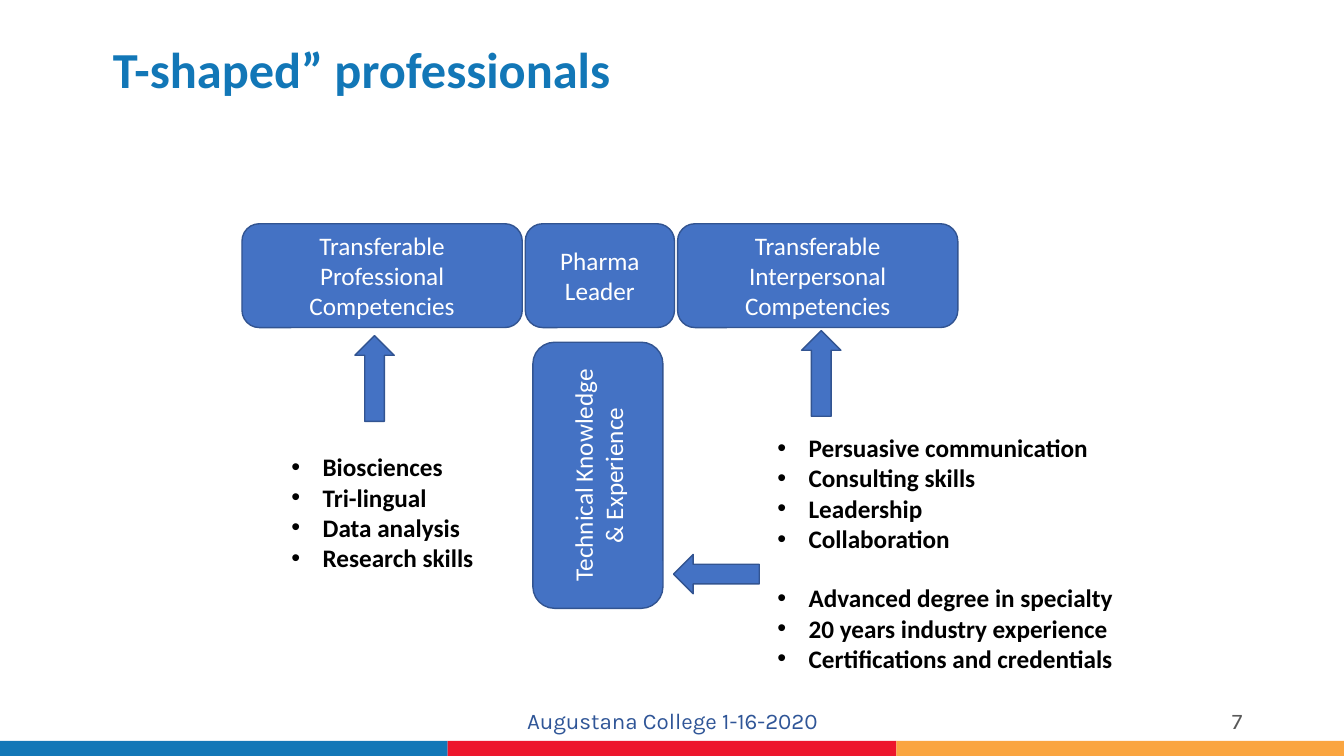
import pptx
import pptx.util
import pptx.dml.color
import pptx.enum.shapes
import pptx.enum.text
import pptx.oxml.ns
import lxml.etree

PX = 9144  # EMU per px, 100 px to the inch
RGB = pptx.dml.color.RGBColor
SHAPES = pptx.enum.shapes.MSO_SHAPE
ALIGN = pptx.enum.text.PP_ALIGN
ANCHOR = pptx.enum.text.MSO_ANCHOR

TITLE_BLUE = RGB(0x12, 0x77, 0xB7)
RED = RGB(0xED, 0x16, 0x2C)
ORANGE = RGB(0xFA, 0xA5, 0x40)
BOX_BLUE = RGB(0x44, 0x72, 0xC4)
BOX_LINE = RGB(0x32, 0x54, 0x91)
FOOTER_BLUE = RGB(0x2F, 0x55, 0x97)
GREY = RGB(0x59, 0x59, 0x59)
BLACK = RGB(0, 0, 0)
WHITE = RGB(0xFF, 0xFF, 0xFF)

COMPETENCIES = [
    (240, 278, ["Transferable Professional Competencies"]),
    (521, 148, ["Pharma", "Leader"]),
    (672, 278, ["Transferable Interpersonal Competencies"]),
]
ARROWS = [(352, 333, 0), (795, 328, 0), (691, 527, 270)]
LISTS = [
    ((279, 443, 207, 131),
     ["Biosciences", "Tri-lingual", "Data analysis", "Research skills"]),
    ((761, 424, 344, 132),
     ["Persuasive communication", "Consulting skills", "Leadership", "Collaboration"]),
    ((761, 573, 404, 101),
     ["Advanced degree in specialty", "20 years industry experience",
      "Certifications and credentials"]),
]


def emu(lengths):
    return [length * PX for length in lengths]


def place(shape, bounds):
    for name, value in zip(("left", "top", "width", "height"), emu(bounds)):
        setattr(shape, name, value)


def add_bullet(para):
    properties = para._p.get_or_add_pPr()
    properties.set("marL", str(31 * PX))
    properties.set("indent", str(-31 * PX))
    for tag, key, value in (("a:buFont", "typeface", "Arial"), ("a:buChar", "char", "•")):
        bullet = lxml.etree.SubElement(properties, pptx.oxml.ns.qn(tag))
        bullet.set(key, value)


def write(shape, lines, color, size=18, font="Calibri", bold=False,
          align=ALIGN.CENTER, anchor=ANCHOR.MIDDLE, bulleted=False, spacing=1.0):
    frame = shape.text_frame
    frame_format = {"word_wrap": True, "vertical_anchor": anchor,
                    "auto_size": pptx.enum.text.MSO_AUTO_SIZE.NONE}
    for name, value in frame_format.items():
        setattr(frame, name, value)
    para_format = {"alignment": align, "line_spacing": spacing,
                   "space_before": pptx.util.Pt(0), "space_after": pptx.util.Pt(0)}
    font_format = {"name": font, "size": pptx.util.Pt(size), "bold": bold}
    for index, line in enumerate(lines):
        para = frame.paragraphs[0] if index == 0 else frame.add_paragraph()
        for name, value in para_format.items():
            setattr(para, name, value)
        if bulleted:
            add_bullet(para)
        span = para.add_run()
        span.text = line
        for name, value in font_format.items():
            setattr(span.font, name, value)
        span.font.color.rgb = color


def add_block(page, kind, bounds, fill=BOX_BLUE, line=BOX_LINE, rotation=0):
    shape = page.shapes.add_shape(kind, *emu(bounds))
    shape.shadow.inherit = False
    shape.rotation = rotation
    shape.fill.solid()
    shape.fill.fore_color.rgb = fill
    if line is None:
        shape.line.fill.background()
    else:
        shape.line.color.rgb = line
        shape.line.width = pptx.util.Pt(1)
    return shape


def add_label(page, bounds, text, color, align):
    box = page.shapes.add_textbox(*emu(bounds))
    write(box, [text], color, size=16, font="Karla", align=align)


def main():
    deck = pptx.Presentation()
    deck.slide_width, deck.slide_height = emu((1333, 750))
    page = deck.slides.add_slide(deck.slide_layouts.get_by_name("Comparison"))

    # Title
    title = page.shapes.title
    place(title, (92, 40, 1150, 145))
    title.text_frame.margin_left = 20 * PX
    write(title, ["T-shaped” professionals"], TITLE_BLUE, size=36, bold=True,
          align=ALIGN.LEFT, anchor=ANCHOR.TOP, spacing=0.9)

    # Lists of skills
    bodies = [holder for holder in page.placeholders if holder.placeholder_format.idx > 0]
    for body, (bounds, lines) in zip(bodies, LISTS):
        place(body, bounds)
        write(body, lines, BLACK, bold=True, align=ALIGN.LEFT,
              anchor=ANCHOR.TOP, bulleted=True)
    for spare in bodies[len(LISTS):]:
        spare.element.getparent().remove(spare.element)

    # Bar and stem of the T
    for left, width, lines in COMPETENCIES:
        block = add_block(page, SHAPES.ROUNDED_RECTANGLE, (left, 222, width, 103))
        write(block, lines, WHITE)
    stem = add_block(page, SHAPES.ROUNDED_RECTANGLE, (461, 407, 264, 129), rotation=270)
    write(stem, ["Technical Knowledge & Experience"], WHITE)

    # Arrows from the lists to the T
    for left, top, rotation in ARROWS:
        add_block(page, SHAPES.UP_ARROW, (left, top, 39, 85), rotation=rotation)

    # Footer stripes and text
    stripe = deck.slide_width / PX / 3
    for index, color in enumerate((TITLE_BLUE, RED, ORANGE)):
        left, right = round(index * stripe), round((index + 1) * stripe)
        add_block(page, SHAPES.RECTANGLE, (left, 735, right - left, 15), color, None)
    add_label(page, (442, 695, 450, 40), "Augustana College 1-16-2020", FOOTER_BLUE, ALIGN.CENTER)
    add_label(page, (942, 695, 300, 40), "7", GREY, ALIGN.RIGHT)

    deck.save("out.pptx")


if __name__ == "__main__":
    main()
